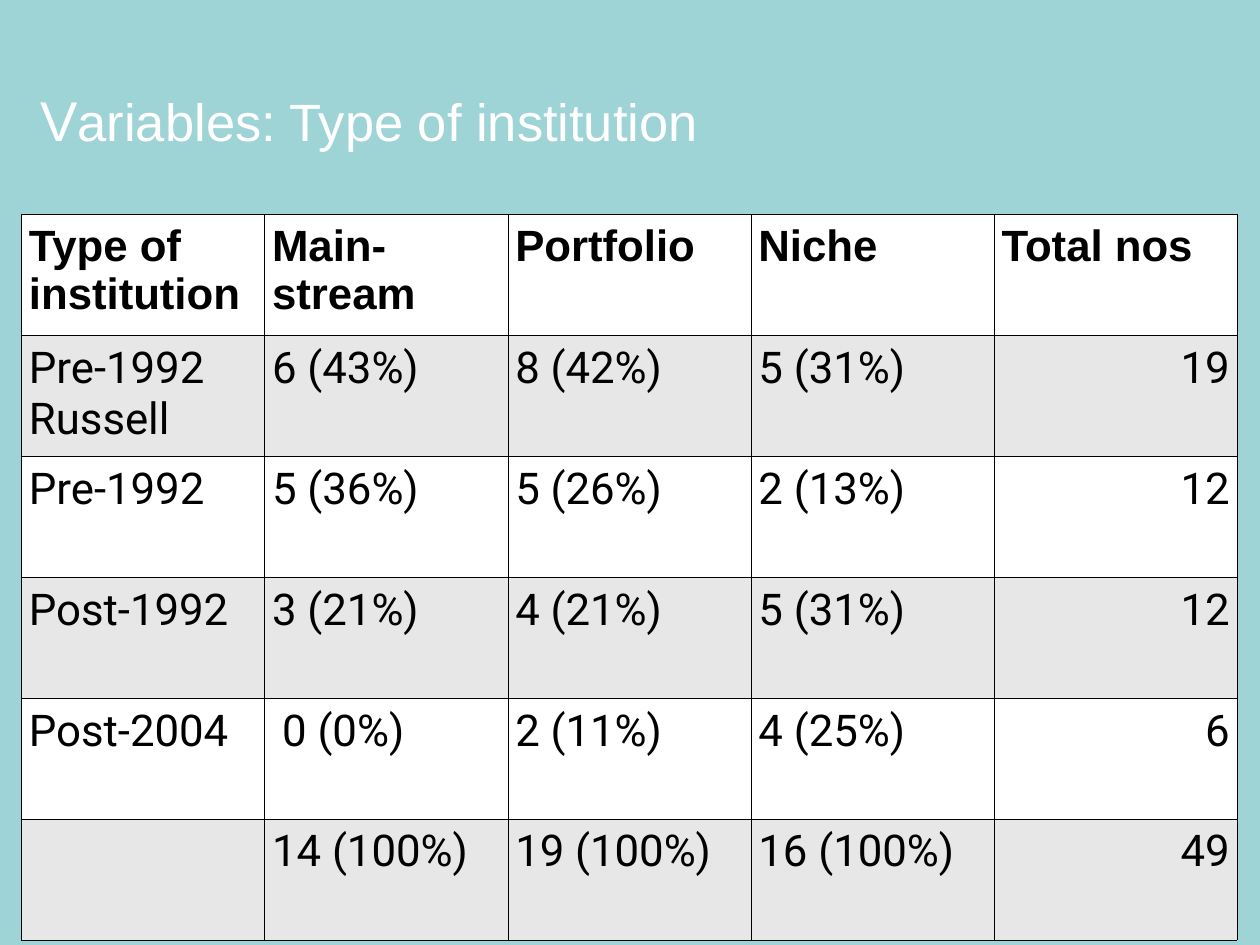
from lxml.etree import SubElement
from pptx import Presentation
from pptx.dml.color import RGBColor
from pptx.enum.text import PP_ALIGN
from pptx.oxml.ns import qn
from pptx.util import Inches, Pt

COLORS = {"page": "9FD4D7", "title": "FFFFFF", "text": "000000",
          "border": "000000", "plain": "FFFFFF", "band": "E7E7E7"}
ROWS = [
    ["Type of institution", "Main-stream", "Portfolio", "Niche", "Total nos"],
    ["Pre-1992 Russell", "6 (43%)", "8 (42%)", "5 (31%)", "19"],
    ["Pre-1992", "5 (36%)", "5 (26%)", "2 (13%)", "12"],
    ["Post-1992", "3 (21%)", "4 (21%)", "5 (31%)", "12"],
    ["Post-2004", "0 (0%)", "2 (11%)", "4 (25%)", "6"],
    ["", "14 (100%)", "19 (100%)", "16 (100%)", "49"],
]
COLUMN_WIDTH, ROW_HEIGHT = Inches(1.93), Inches(0.96)


def add_text(para, text, size=25, font="Roboto", color="text", bold=False, align=PP_ALIGN.LEFT):
    para.alignment = align
    span = para.add_run()
    span.text = text
    span.font.name = font
    span.font.size = Pt(size)
    span.font.bold = bold
    span.font.color.rgb = RGBColor.from_string(COLORS[color])


def add_borders(cell):
    properties = cell._tc.get_or_add_tcPr()
    for index, side in enumerate(("a:lnL", "a:lnR", "a:lnT", "a:lnB")):
        line = properties.makeelement(qn(side), {"w": str(Pt(0.25))})
        fill = SubElement(line, qn("a:solidFill"))
        SubElement(fill, qn("a:srgbClr"), val=COLORS["border"])
        properties.insert(index, line)


deck = Presentation()
deck.slide_width, deck.slide_height = Inches(10), Inches(7.5)
page = deck.slides.add_slide(deck.slide_layouts[6])
page.background.fill.solid()
page.background.fill.fore_color.rgb = RGBColor.from_string(COLORS["page"])

title = page.shapes.add_textbox(Inches(0.27), Inches(0.63), Inches(5.33), Inches(0.6))
frame = title.text_frame
frame.word_wrap = False
frame.margin_left = frame.margin_right = frame.margin_top = frame.margin_bottom = Inches(0.05)
for text, size in (("V", 32), ("ariables: Type of institution", 30)):
    add_text(frame.paragraphs[0], text, size=size, font="Arial", color="title")

table = page.shapes.add_table(len(ROWS), len(ROWS[0]), Inches(0.17), Inches(1.7),
                              COLUMN_WIDTH * len(ROWS[0]), ROW_HEIGHT * len(ROWS)).table
for column in table.columns:
    column.width = COLUMN_WIDTH
for row_index, values in enumerate(ROWS):
    table.rows[row_index].height = ROW_HEIGHT
    header = row_index == 0
    for column_index, text in enumerate(values):
        cell = table.cell(row_index, column_index)
        cell.margin_left = cell.margin_right = cell.margin_top = cell.margin_bottom = Inches(0.06)
        cell.fill.solid()
        cell.fill.fore_color.rgb = RGBColor.from_string(COLORS["band" if row_index % 2 else "plain"])
        add_borders(cell)
        total = column_index == len(values) - 1 and not header
        if text:
            add_text(cell.text_frame.paragraphs[0], text, bold=header,
                     font="Arial" if header else "Roboto",
                     align=PP_ALIGN.RIGHT if total else PP_ALIGN.LEFT)

zero_para = table.cell(4, 1).text_frame.paragraphs[0]
zero_para._p.get_or_add_pPr().set("indent", str(Inches(0.08)))

deck.save("out.pptx")
